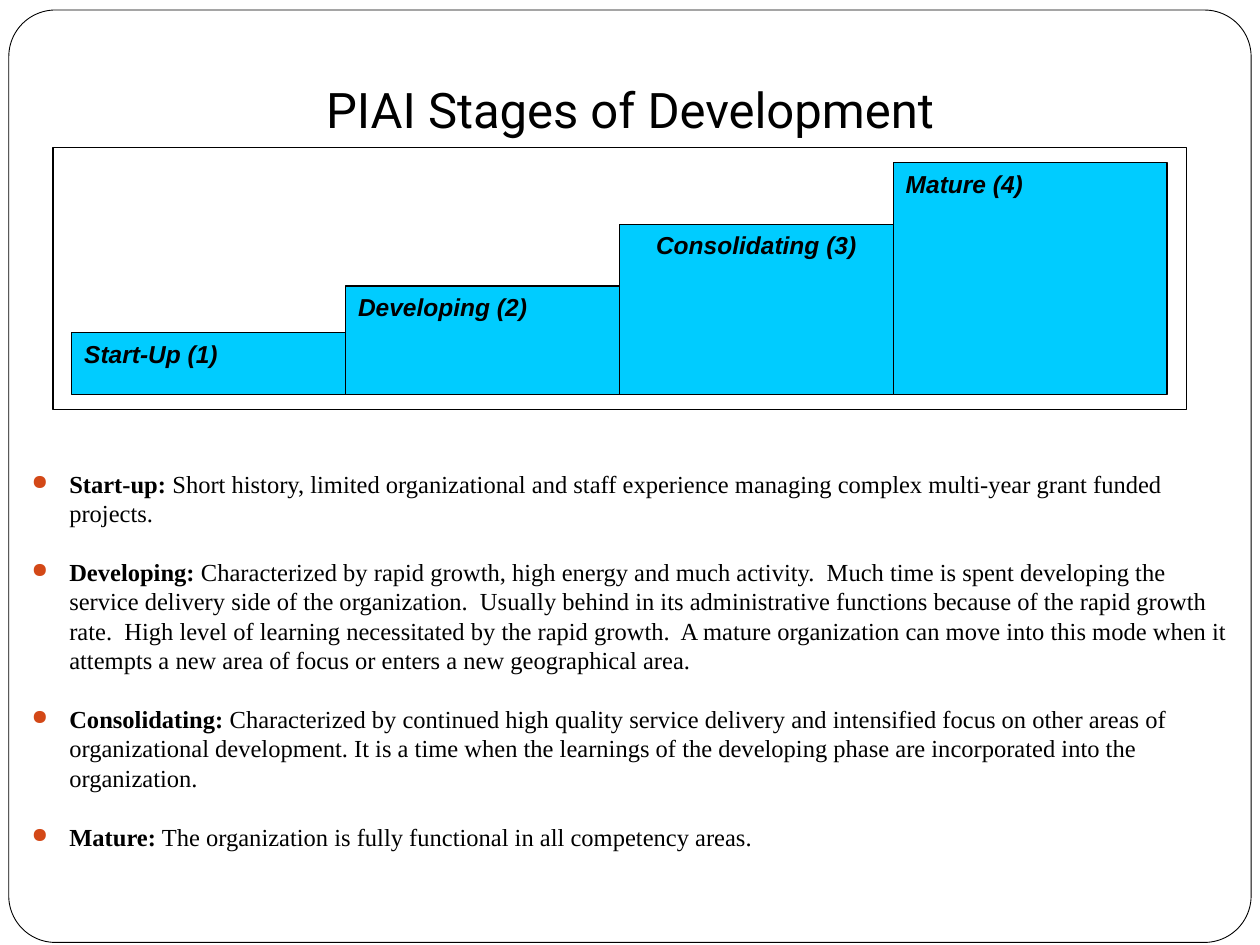
from dataclasses import dataclass
from typing import Optional

from lxml.etree import SubElement
from pptx import Presentation
from pptx.dml.color import RGBColor as Color
from pptx.enum.shapes import MSO_SHAPE as Kind
from pptx.enum.text import MSO_ANCHOR as Anchor, MSO_AUTO_SIZE as Auto, PP_ALIGN as Align
from pptx.oxml.ns import qn
from pptx.util import Pt


@dataclass(frozen=True)
class Theme:
    ink: Color = Color(0, 0, 0)
    paper: Color = Color(255, 255, 255)
    step: Color = Color(0x00, 0xCC, 0xFF)
    dot: str = "D34817"
    head: str = "Roboto"
    label: str = "Arial"
    body: str = "Times New Roman"
    big: float = 28
    small: float = 14
    pitch: float = 16.8


@dataclass(frozen=True)
class Box:
    left: float
    top: float
    width: float
    height: float

    def points(self) -> tuple:
        return Pt(self.left), Pt(self.top), Pt(self.width), Pt(self.height)


@dataclass(frozen=True)
class Stage:
    label: str
    height: float
    align: Align
    term: str
    text: str


LOOK = Theme()
PAGE = Box(5.04, 5.76, 709.92, 532.8)
TITLE = Box(36, 12.24, 648, 74.16)
BODY = Box(18, 264.24, 689.76, 198)
FRAME = Box(30.24, 84.24, 648, 149.76)
LEFT, BASE, WIDTH = 41.04, 225.36, 156.48
INDENT = 21.6

STAGES = [
    Stage("Start-Up (1)", 35.28, Align.LEFT, "Start-up:",
          " Short history, limited organizational and staff experience managing "
          "complex multi-year grant funded projects."),
    Stage("Developing (2)", 61.92, Align.LEFT, "Developing:",
          " Characterized by rapid growth, high energy and much activity.  Much time is "
          "spent developing the service delivery side of the organization.  Usually behind "
          "in its administrative functions because of the rapid growth rate.  High level of "
          "learning necessitated by the rapid growth.  A mature organization can move into "
          "this mode when it attempts a new area of focus or enters a new geographical area."),
    Stage("Consolidating (3)", 97.2, Align.CENTER, "Consolidating:",
          " Characterized by continued high quality service delivery and intensified focus "
          "on other areas of organizational development. It is a time when the learnings of "
          "the developing phase are incorporated into the organization."),
    Stage("Mature (4)", 132.48, Align.LEFT, "Mature:",
          " The organization is fully functional in all competency areas."),
]


def add_run(para, text: str, face: str, size: float, bold=False, slant=False) -> None:
    """Add one formatted run to a paragraph."""
    run = para.add_run()
    run.text = text
    font = run.font
    font.name, font.size = face, Pt(size)
    font.bold, font.italic = bold, slant
    font.color.rgb = LOOK.ink


def add_block(shapes, kind: Kind, box: Box, fill: Optional[Color], line: float):
    """Draw an outlined shape with an optional fill."""
    shape = shapes.add_shape(kind, *box.points())
    shape.shadow.inherit = False
    if fill is None:
        shape.fill.background()
    else:
        shape.fill.solid()
        shape.fill.fore_color.rgb = fill
    shape.line.color.rgb = LOOK.ink
    shape.line.width = Pt(line)
    return shape


def add_page(slide) -> None:
    """Draw the rounded page border behind everything else."""
    page = add_block(slide.shapes, Kind.ROUNDED_RECTANGLE, PAGE, LOOK.paper, 0.5)
    page.adjustments[0] = 0.05
    slide.shapes.element.insert(2, page.element)


def set_title(slide, text: str) -> None:
    """Place and fill the title."""
    title = slide.shapes.title
    title.left, title.top, title.width, title.height = TITLE.points()
    frame = title.text_frame
    frame.auto_size = Auto.NONE
    frame.vertical_anchor = Anchor.BOTTOM
    frame.margin_bottom = Pt(7.2)
    para = frame.paragraphs[0]
    para.alignment = Align.CENTER
    add_run(para, text, LOOK.head, LOOK.big)


def add_bullet(para) -> None:
    """Give a paragraph a hanging coloured dot."""
    props = para._p.get_or_add_pPr()
    props.set("marL", str(Pt(INDENT)))
    props.set("indent", str(-Pt(INDENT)))
    tint = SubElement(props, qn("a:buClr"))
    SubElement(tint, qn("a:srgbClr"), val=LOOK.dot)
    SubElement(props, qn("a:buSzPct"), val="85000")
    SubElement(props, qn("a:buChar"), char="●")


def add_body(slide) -> None:
    """Write the bulleted stage descriptions."""
    frame = slide.shapes.add_textbox(*BODY.points()).text_frame
    frame.word_wrap = True
    frame.margin_left = frame.margin_right = 0
    for rank, stage in enumerate(STAGES):
        para = frame.add_paragraph() if rank else frame.paragraphs[0]
        add_bullet(para)
        para.line_spacing = Pt(LOOK.pitch)
        if rank:
            para.space_before = Pt(LOOK.pitch)
        add_run(para, stage.term, LOOK.body, LOOK.small, bold=True)
        add_run(para, stage.text, LOOK.body, LOOK.small)


def add_steps(slide) -> None:
    """Draw the framed staircase of stages."""
    group = slide.shapes.add_group_shape().shapes
    add_block(group, Kind.RECTANGLE, FRAME, None, 0.75)
    for rank, stage in enumerate(STAGES):
        box = Box(LEFT + rank * WIDTH, BASE - stage.height, WIDTH, stage.height)
        shape = add_block(group, Kind.RECTANGLE, box, LOOK.step, 0.75)
        frame = shape.text_frame
        frame.word_wrap = True
        frame.vertical_anchor = Anchor.TOP
        para = frame.paragraphs[0]
        para.alignment = stage.align
        add_run(para, stage.label, LOOK.label, LOOK.small, bold=True, slant=True)


def main() -> None:
    """Build and save the slide."""
    deck = Presentation()
    deck.slide_width, deck.slide_height = Pt(720), Pt(540)
    slide = deck.slides.add_slide(deck.slide_layouts[5])
    add_page(slide)
    set_title(slide, "PIAI Stages of Development")
    add_body(slide)
    add_steps(slide)
    deck.save("out.pptx")


if __name__ == "__main__":
    main()
